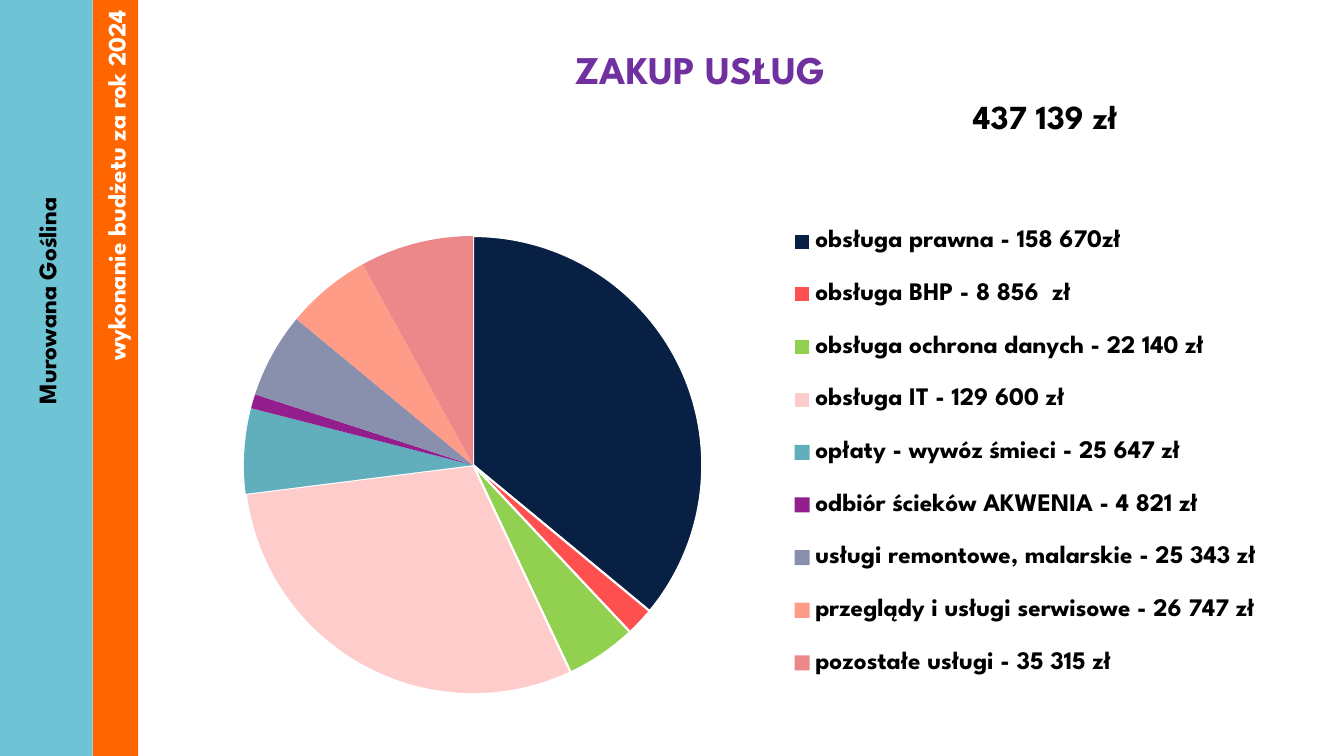
from lxml.etree import SubElement
from pptx import Presentation
from pptx.chart.data import CategoryChartData
from pptx.dml.color import RGBColor
from pptx.enum.chart import XL_CHART_TYPE as ChartType, XL_LEGEND_POSITION as LegendPosition
from pptx.enum.shapes import MSO_SHAPE as Shape
from pptx.enum.text import MSO_ANCHOR as Anchor, MSO_AUTO_SIZE as AutoSize, PP_ALIGN as Align
from pptx.oxml import parse_xml
from pptx.oxml.ns import nsdecls, qn
from pptx.util import Inches, Pt

HEADING_FONT = "League Spartan"


def color(value):
    return RGBColor.from_string(value)


def write(shape, text, size, text_color, align):
    paragraph = shape.text_frame.paragraphs[0]
    paragraph.text = text
    paragraph.alignment = align
    font = paragraph.font
    font.name, font.size, font.bold = HEADING_FONT, Pt(size), True
    font.color.rgb = color(text_color)


presentation = Presentation()
presentation.slide_width, presentation.slide_height = Inches(13.33), Inches(7.5)
slide = presentation.slides.add_slide(presentation.slide_layouts[6])

bars = []
for left, width, fill in [(0, 0.92, "6EC4D5"), (0.92, 0.45, "FF6600")]:
    bar = slide.shapes.add_shape(Shape.RECTANGLE, Inches(left), 0, Inches(width), Inches(7.5))
    bar.shadow.inherit = False
    bar.fill.solid()
    bar.fill.fore_color.rgb = color(fill)
    bar.line.fill.background()
    bars.append(bar)

budget_bar = bars[1]
write(budget_bar, "wykonanie budżetu za rok 2024", 18, "FFFFFF", Align.RIGHT)
budget_bar.text_frame.vertical_anchor = Anchor.MIDDLE
budget_bar.text_frame._txBody.bodyPr.set("vert", "vert270")

services = [
    ("obsługa prawna - 158 670zł", 36, "072044"),
    ("obsługa BHP - 8 856  zł", 2, "FF5050"),
    ("obsługa ochrona danych - 22 140 zł", 5, "92D050"),
    ("obsługa IT - 129 600 zł", 30, "FFCCCC"),
    ("opłaty - wywóz śmieci - 25 647 zł", 6, "61AEBD"),
    ("odbiór ścieków AKWENIA - 4 821 zł", 1, "931F8E"),
    ("usługi remontowe, malarskie - 25 343 zł", 6, "8990AE"),
    ("przeglądy i usługi serwisowe - 26 747 zł", 6, "FF9C87"),
    ("pozostałe usługi - 35 315 zł", 8, "EC888A"),
]
chart_data = CategoryChartData()
chart_data.categories = [name for name, share, fill in services]
chart_data.add_series("Series 1", [share for name, share, fill in services])
chart = slide.shapes.add_chart(
    ChartType.PIE, Inches(1.83), Inches(1.92), Inches(11.27), Inches(5.39), chart_data
).chart
chart.has_title = False
chart.font.name, chart.font.size = "Calibri", Pt(9.2)
chart.font.color.rgb = color("000000")
chart.has_legend = True
legend = chart.legend
legend.position = LegendPosition.RIGHT
legend.include_in_layout = False
legend.font.name, legend.font.size, legend.font.bold = HEADING_FONT, Pt(18), True
legend.font.color.rgb = color("000000")

plot = chart.plots[0]
plot.vary_by_categories = True
series = plot.series[0]
for index, (name, share, fill) in enumerate(services):
    point_format = series.points[index].format
    point_format.fill.solid()
    point_format.fill.fore_color.rgb = color(fill)
    if index < 4:
        point_format.line.color.rgb = color("FFFFFF")
        point_format.line.width = Pt(1.5)
    else:
        point_format.line.fill.background()

slices = series._element.findall(qn("c:dPt"))
for element, explosion in [(slices[0], 18)] + [(point, 0) for point in slices]:
    tag = parse_xml(f'<c:explosion {nsdecls("c")} val="{explosion}"/>')
    if explosion:
        element.addprevious(tag)
    else:
        element.find(qn("c:spPr")).addprevious(tag)

plot_area = chart._chartSpace.chart.plotArea
for element in plot_area.findall(qn("c:layout")):
    plot_area.remove(element)
for element in legend._element.findall(qn("c:layout")):
    legend._element.remove(element)
plot_layout = parse_xml(f'<c:layout {nsdecls("c")}/>')
legend_layout = parse_xml(f'<c:layout {nsdecls("c")}/>')
plot_area.insert(0, plot_layout)
legend._element.find(qn("c:legendPos")).addnext(legend_layout)
for layout, target, box in [
    (plot_layout, "inner", (0.016, 0, 0.476, 1)),
    (legend_layout, None, (0.515, 0.013, 0.45, 0.927)),
]:
    manual = SubElement(layout, qn("c:manualLayout"))
    settings = [("layoutTarget", target)] if target else []
    settings += [("xMode", "edge"), ("yMode", "edge")]
    settings += zip("xywh", box)
    for setting, value in settings:
        SubElement(manual, qn(f"c:{setting}")).set("val", str(value))

for text, left, top, width, height, size, text_color, align, rotation in [
    ("Murowana Goślina", -0.8, 2.65, 2.52, 0.4, 18, "000000", Align.LEFT, 270),
    ("ZAKUP USŁUG", 3.61, 0.4, 6.67, 0.57, 28, "7030A0", Align.CENTER, 0),
    ("437 139 zł", 9.55, 0.9, 2.3, 0.5, 24, "000000", Align.LEFT, 0),
]:
    label = slide.shapes.add_textbox(Inches(left), Inches(top), Inches(width), Inches(height))
    label.rotation = rotation
    label.text_frame.word_wrap = rotation == 0
    label.text_frame.auto_size = AutoSize.SHAPE_TO_FIT_TEXT
    write(label, text, size, text_color, align)

presentation.save("out.pptx")
